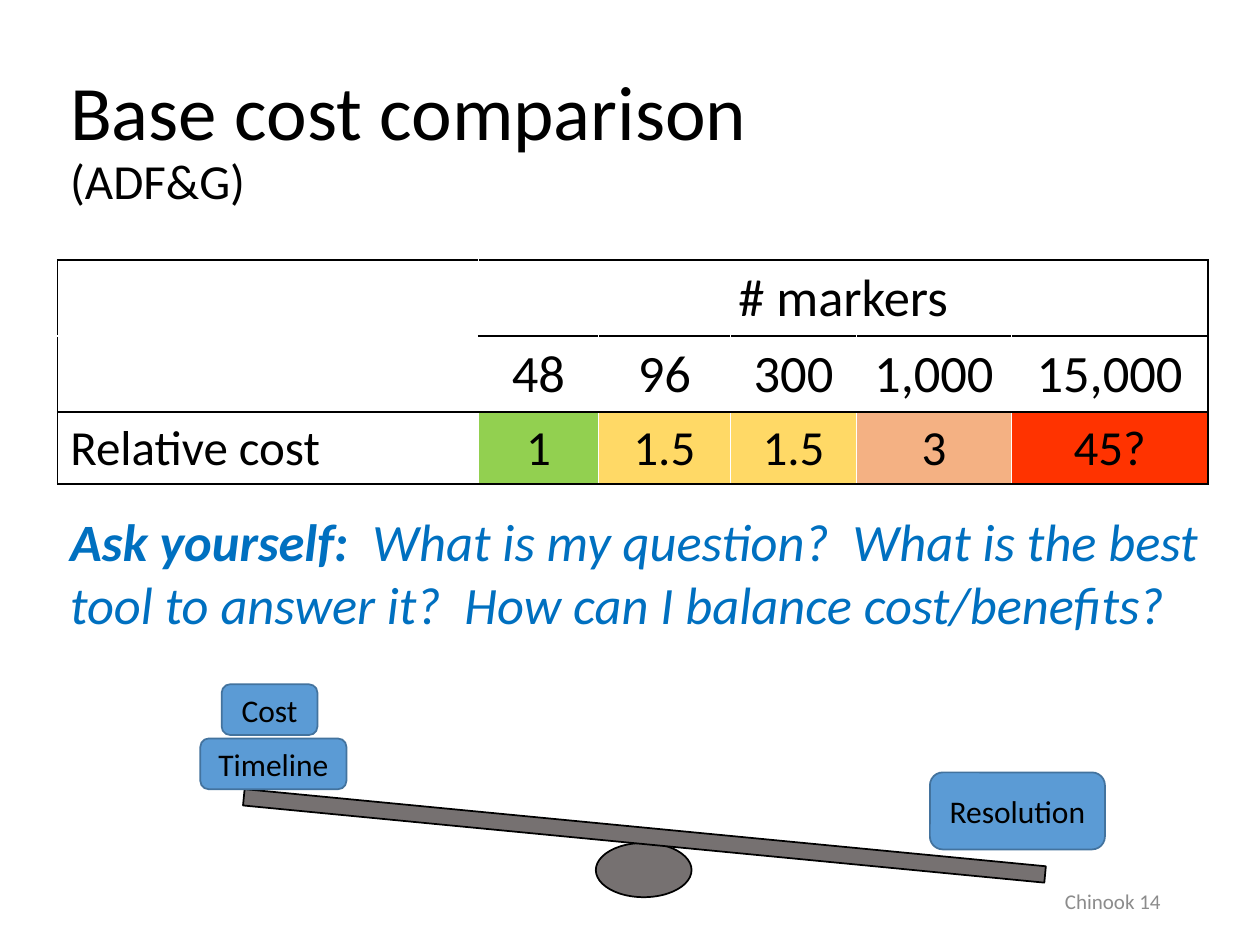
from lxml.etree import SubElement
from pptx import Presentation
from pptx.dml.color import RGBColor
from pptx.enum.shapes import MSO_SHAPE
from pptx.enum.text import MSO_ANCHOR, PP_ALIGN
from pptx.oxml.ns import qn
from pptx.util import Pt

FONT = "Calibri"
BLACK, WHITE, BLUE, GRAY = "000000", "FFFFFF", "0070C0", "8C8C8C"
BEAM_GRAY, BLOCK_BLUE, BLOCK_EDGE = "767171", "5B9BD5", "43739E"

COLUMN_WIDTHS = [240.5, 68.4, 75.6, 72, 88.5, 112.3]
ROW_HEIGHTS = [43.5, 43.5, 41]
ROW_SIZES = [30, 30, 28]
ROWS = [
    ["", "# markers", "", "", "", ""],
    ["", "48", "96", "300", "1,000", "15,000"],
    ["Relative cost", "1", "1.5", "1.5", "3", "45?"],
]
COST_FILLS = [None, "92D050", "FFD966", "FFD966", "F4B183", "FF3300"]


def color(value):
    return RGBColor.from_string(value)


def set_font(font, size, value):
    font.name = FONT
    font.size = Pt(size)
    font.color.rgb = color(value)


def add_text_box(page, left, top, width, height, anchor=MSO_ANCHOR.TOP):
    """Add a wrapping text box and return its first paragraph."""
    box = page.shapes.add_textbox(Pt(left), Pt(top), Pt(width), Pt(height))
    box.text_frame.word_wrap = True
    box.text_frame.vertical_anchor = anchor
    return box.text_frame.paragraphs[0]


def add_title(page, left, top, width, height):
    para = add_text_box(page, left, top, width, height, MSO_ANCHOR.MIDDLE)
    para.line_spacing = 0.9
    set_font(para.font, 44, BLACK)
    para.add_run().text = "Base cost comparison"
    para.add_line_break()
    span = para.add_run()
    span.text = "(ADF&G)"
    span.font.size = Pt(28)


def add_footer(page, left, top, width, height):
    para = add_text_box(page, left, top, width, height, MSO_ANCHOR.MIDDLE)
    para.text = "Chinook 14"
    para.alignment = PP_ALIGN.RIGHT
    set_font(para.font, 12, GRAY)


def add_question(page, left, top, width, height):
    para = add_text_box(page, left, top, width, height)
    set_font(para.font, 30, BLUE)
    para.font.italic = True
    lead = para.add_run()
    lead.text = "Ask yourself:  "
    lead.font.bold = True
    para.add_run().text = ("What is my question?  What is the best tool to answer it?  "
                           "How can I balance cost/benefits?")


def set_borders(cell, left, right, top, bottom):
    properties = cell._tc.get_or_add_tcPr()
    for side, value in zip("LRTB", (left, right, top, bottom)):
        line = SubElement(properties, qn(f"a:ln{side}"), w=str(Pt(1)))
        fill = SubElement(line, qn("a:solidFill"))
        SubElement(fill, qn("a:srgbClr"), val=value)


def add_cost_table(page, left, top):
    last = len(COLUMN_WIDTHS) - 1
    frame = page.shapes.add_table(len(ROWS), len(COLUMN_WIDTHS), Pt(left), Pt(top),
                                  Pt(sum(COLUMN_WIDTHS)), Pt(sum(ROW_HEIGHTS)))
    table = frame.table
    table.first_row = table.horz_banding = False
    for column, width in zip(table.columns, COLUMN_WIDTHS):
        column.width = Pt(width)
    for row, height in zip(table.rows, ROW_HEIGHTS):
        row.height = Pt(height)
    table.cell(0, 1).merge(table.cell(0, last))

    for r, texts in enumerate(ROWS):
        for c, text in enumerate(texts):
            cell = table.cell(r, c)
            # The empty corner has no rule between its two rows.
            top_edge, bottom_edge = (WHITE if edge == 1 and c == 0 else BLACK
                                     for edge in (r, r + 1))
            at_right = c == last or cell.is_merge_origin
            set_borders(cell, WHITE if c else BLACK, BLACK if at_right else WHITE,
                        top_edge, bottom_edge)
            if r == 2 and COST_FILLS[c]:
                cell.fill.solid()
                cell.fill.fore_color.rgb = color(COST_FILLS[c])
            else:
                cell.fill.background()
            if text:
                para = cell.text_frame.paragraphs[0]
                para.text = text
                para.alignment = PP_ALIGN.CENTER if c else PP_ALIGN.LEFT
                set_font(para.font, ROW_SIZES[r], BLACK)


def add_part(group, kind, left, top, width, height, fill, edge):
    shape = group.shapes.add_shape(kind, Pt(left), Pt(top), Pt(width), Pt(height))
    shape.shadow.inherit = False
    shape.fill.solid()
    shape.fill.fore_color.rgb = color(fill)
    shape.line.color.rgb = color(edge)
    shape.line.width = Pt(1)
    return shape


def add_seesaw(page, left, top):
    group = page.shapes.add_group_shape()
    add_part(group, MSO_SHAPE.OVAL, left + 226, top + 90.7, 54.7, 31, BEAM_GRAY, BLACK)
    beam = add_part(group, MSO_SHAPE.RECTANGLE, left + 23.8, top + 82, 460, 9.4,
                    BEAM_GRAY, BLACK)
    beam.rotation = 5.5
    blocks = [
        ("Resolution", 416.9, 50.4, 100, 44),
        ("Cost", 12.2, 0, 54.7, 29),
        ("Timeline", 0, 31, 83.5, 29),
    ]
    for label, x, y, width, height in blocks:
        block = add_part(group, MSO_SHAPE.ROUNDED_RECTANGLE, left + x, top + y,
                         width, height, BLOCK_BLUE, BLOCK_EDGE)
        block.text_frame.vertical_anchor = MSO_ANCHOR.MIDDLE
        para = block.text_frame.paragraphs[0]
        para.text = label
        para.alignment = PP_ALIGN.CENTER
        set_font(para.font, 18, BLACK)


def main():
    deck = Presentation()
    deck.slide_width, deck.slide_height = Pt(720), Pt(540)
    page = deck.slides.add_slide(deck.slide_layouts[6])
    add_title(page, 33, 29, 675, 104.4)
    add_footer(page, 508.3, 500.4, 162, 28.8)
    add_cost_table(page, 33, 148.5)
    add_question(page, 33, 287.3, 663, 80)
    add_seesaw(page, 114.5, 391)
    deck.save("out.pptx")


if __name__ == "__main__":
    main()
